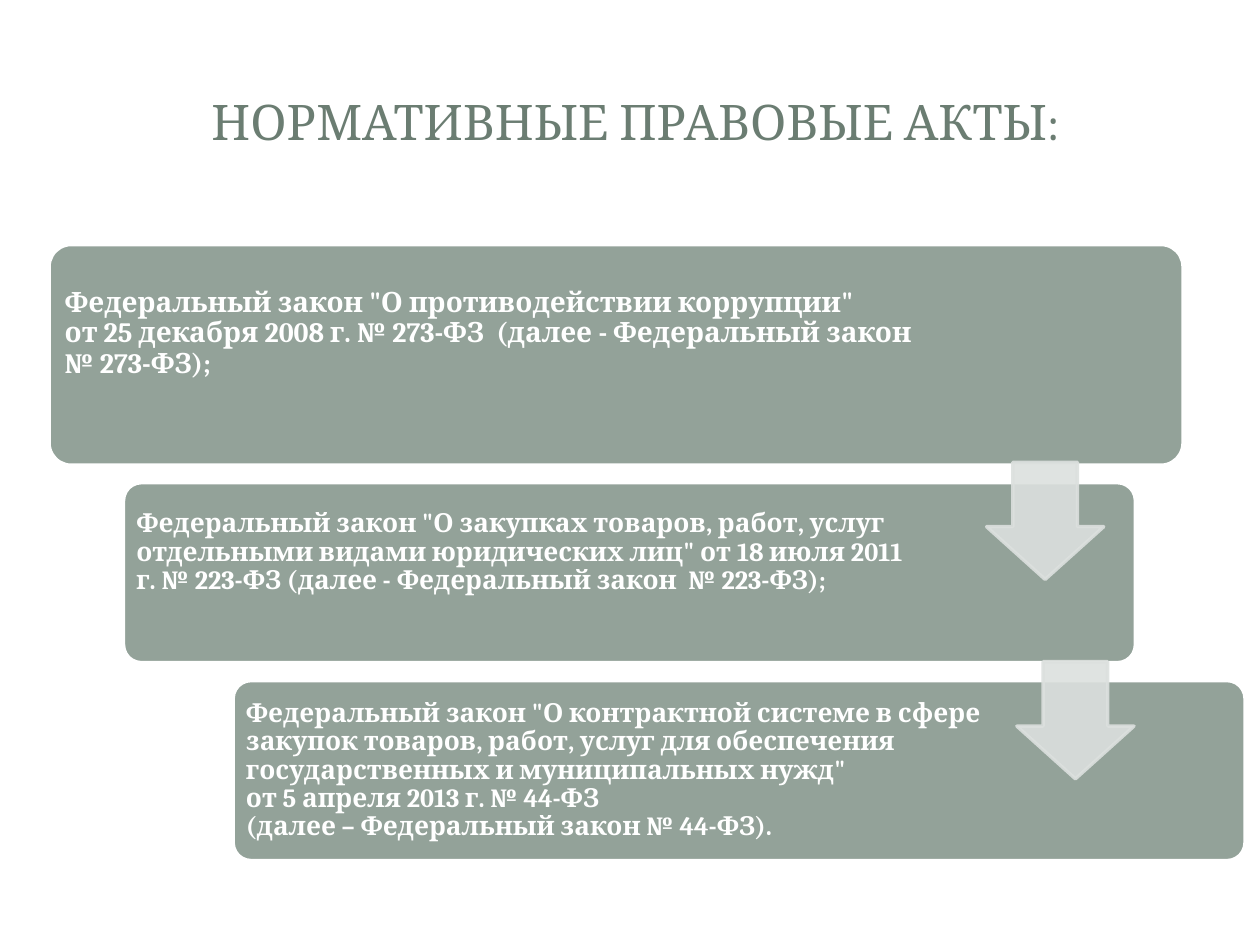
from lxml.etree import SubElement
from pptx import Presentation
from pptx.dml.color import RGBColor
from pptx.enum.shapes import MSO_SHAPE
from pptx.enum.text import MSO_ANCHOR, PP_ALIGN
from pptx.oxml.ns import qn
from pptx.util import Cm, Pt

WHITE = RGBColor(0xFF, 0xFF, 0xFF)
SAGE = RGBColor(0x93, 0xA2, 0x99)
PALE = RGBColor(0xDC, 0xE0, 0xDE)
TITLE_GREEN = RGBColor(0x6B, 0x7D, 0x72)
FONT = "Cambria"
ARROW_SIZE = 2.36

LAWS = [
    {
        "box": (0.99, 4.93, 22.86, 4.45),
        "text_width": 18.21,
        "inset": 0.18,
        "lift": 0.85,
        "size": 16,
        "lines": [
            "Федеральный закон \"О противодействии коррупции\"",
            "от 25 декабря 2008 г. № 273-ФЗ  (далее - Федеральный закон",
            "№ 273-ФЗ);",
        ],
    },
    {
        "box": (2.49, 9.73, 20.4, 3.63),
        "text_width": 15.9,
        "inset": 0.15,
        "lift": 0.8,
        "size": 15,
        "lines": [
            "Федеральный закон \"О закупках товаров, работ, услуг "
            "отдельными видами юридических лиц\" от 18 июля 2011 г. "
            "№ 223-ФЗ (далее - Федеральный закон  № 223-ФЗ);",
        ],
    },
    {
        "box": (4.7, 13.72, 20.4, 3.63),
        "text_width": 15.9,
        "inset": 0.15,
        "lift": 0,
        "size": 15,
        "lines": [
            "Федеральный закон \"О контрактной системе в сфере "
            "закупок товаров, работ, услуг для обеспечения "
            "государственных и муниципальных нужд\"",
            "от 5 апреля 2013 г. № 44-ФЗ",
            "(далее – Федеральный закон № 44-ФЗ).",
        ],
    },
]
ARROWS = [(19.89, 9.32), (20.5, 13.34)]


def add_filled_shape(slide, kind, box, adjustments, fill, line):
    shape = slide.shapes.add_shape(kind, *map(Cm, box))
    shape.shadow.inherit = False
    for index, value in enumerate(adjustments):
        shape.adjustments[index] = value
    shape.fill.solid()
    shape.fill.fore_color.rgb = fill
    shape.line.color.rgb = line
    shape.line.width = Pt(2)
    return shape


def add_text(slide, box, lines, size, color, bold=False, inset=0.25, lift=0):
    text_box = slide.shapes.add_textbox(*map(Cm, box))
    frame = text_box.text_frame
    frame.word_wrap = True
    frame.vertical_anchor = MSO_ANCHOR.MIDDLE
    frame.margin_left = frame.margin_right = frame.margin_top = Cm(inset)
    frame.margin_bottom = Cm(inset + lift)
    paragraph = frame.paragraphs[0]
    for index, line in enumerate(lines):
        if index:
            paragraph.add_line_break()
        run = paragraph.add_run()
        run.text = line
        run.font.name = FONT
        run.font.size = Pt(size)
        run.font.bold = bold
        run.font.color.rgb = color
    return paragraph


def add_law(slide, law):
    left, top, width, height = law["box"]
    add_filled_shape(slide, MSO_SHAPE.ROUNDED_RECTANGLE, law["box"], [0.1], SAGE, WHITE)
    edge = 0.03 * height
    text_area = (left + edge, top + edge, law["text_width"], height - 2 * edge)
    paragraph = add_text(slide, text_area, law["lines"], law["size"], WHITE,
                         bold=True, inset=law["inset"], lift=law["lift"])
    paragraph.line_spacing = 0.9


def add_arrow(slide, left, top):
    arrow = add_filled_shape(slide, MSO_SHAPE.DOWN_ARROW,
                             (left, top, ARROW_SIZE, ARROW_SIZE),
                             [0.55, 0.45], PALE, PALE)
    for color in arrow._element.spPr.iter(qn("a:srgbClr")):
        SubElement(color, qn("a:alpha"), val="90000")
    adjustments = arrow.adjustments
    adjustments[0], adjustments[1] = 0.55, 0.45


def main():
    presentation = Presentation()
    presentation.slide_width = Cm(25.4)
    presentation.slide_height = Cm(19.05)
    slide = presentation.slides.add_slide(presentation.slide_layouts[6])
    title = add_text(slide, (1.5, 1.14, 22.63, 2.59),
                     ["НОРМАТИВНЫЕ ПРАВОВЫЕ АКТЫ:"], 28, TITLE_GREEN)
    title.alignment = PP_ALIGN.CENTER
    for law in LAWS:
        add_law(slide, law)
    for left, top in ARROWS:
        add_arrow(slide, left, top)
    presentation.save("out.pptx")


if __name__ == "__main__":
    main()
